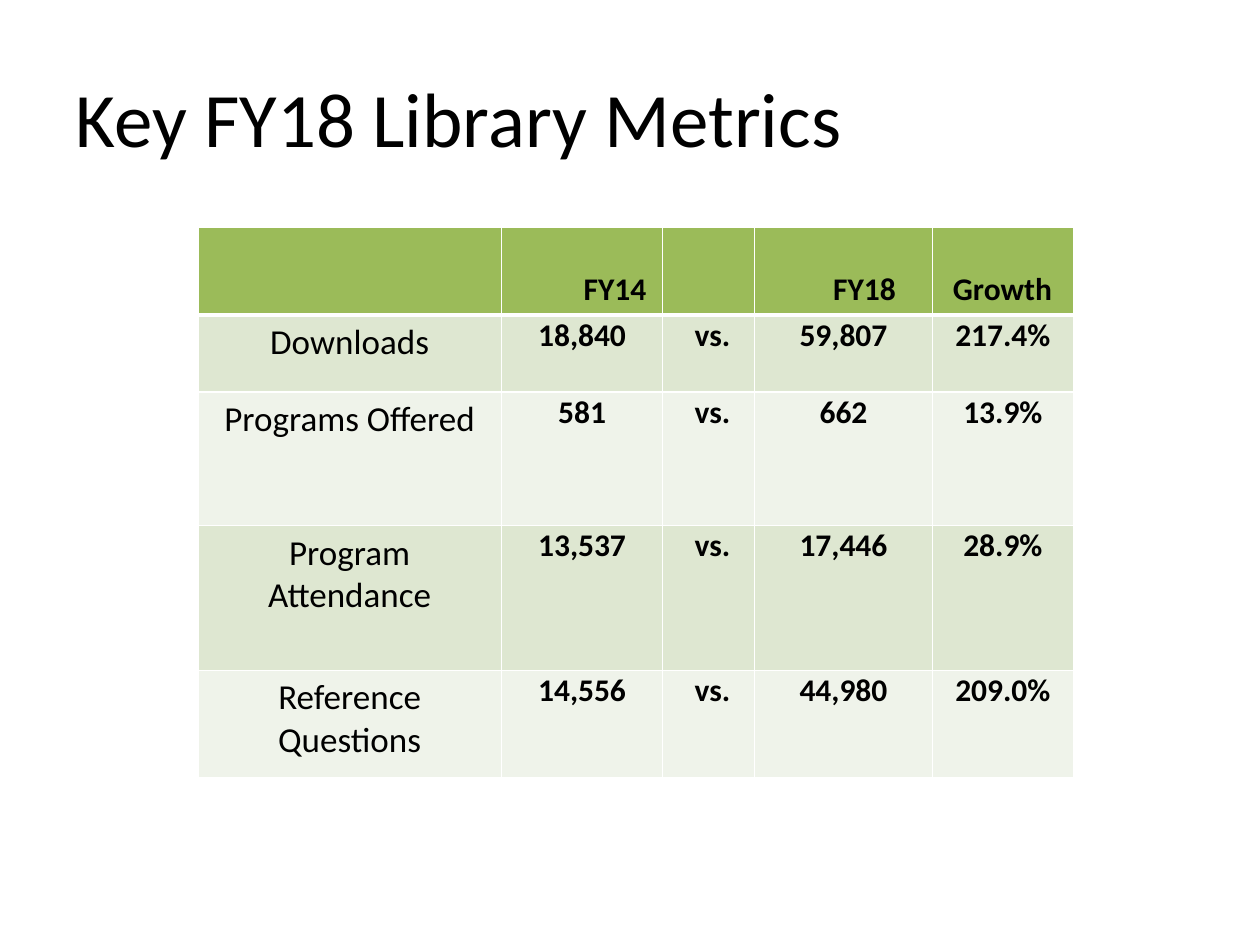
import pptx
import pptx.util
import pptx.dml.color
import pptx.enum.text
import pptx.oxml
import pptx.oxml.ns

Inches = pptx.util.Inches
Pt = pptx.util.Pt
RGBColor = pptx.dml.color.RGBColor
ALIGN = pptx.enum.text.PP_ALIGN
ANCHOR = pptx.enum.text.MSO_ANCHOR

TITLE = "Key FY18 Library Metrics"
HEADS = ["", "FY14", "", "FY18", "Growth"]
METRICS = [
    ("Downloads", "18,840", "59,807", "217.4%"),
    ("Programs Offered", "581", "662", "13.9%"),
    ("Program Attendance", "13,537", "17,446", "28.9%"),
    ("Reference Questions", "14,556", "44,980", "209.0%"),
]
WIDTHS = [2.41, 1.28, 0.73, 1.41, 1.12]
HEIGHTS = [0.7, 0.61, 1.06, 1.15, 0.85]
INDENTS = [0.1, 0.13, 0.1, 0.29, 0.17]

BLACK = RGBColor(0, 0, 0)
WHITE = RGBColor(255, 255, 255)
GREEN = RGBColor(0x9B, 0xBB, 0x59)
BANDS = [RGBColor(0xDE, 0xE7, 0xD1), RGBColor(0xEF, 0xF3, 0xEA)]
VALUE = {"margin_left": Inches(0.01), "margin_right": Inches(0.01),
         "margin_top": Inches(0.01), "margin_bottom": 0}
VERSUS = {**VALUE, "margin_left": Inches(0.07)}


def put(item, values):
    for name, value in values.items():
        setattr(item, name, value)


def style(para, size, bold, align):
    para.alignment = align
    put(para.font, {"name": "Calibri", "size": Pt(size), "bold": bold})
    para.font.color.rgb = BLACK


def edge(cell, sides):
    props = cell._tc.get_or_add_tcPr()
    for side, width in sides.items():
        props.append(pptx.oxml.parse_xml(
            f'<a:ln{side} {pptx.oxml.ns.nsdecls("a")} w="{Pt(width)}">'
            f'<a:solidFill><a:srgbClr val="{WHITE}"/></a:solidFill></a:ln{side}>'))


def main():
    deck = pptx.Presentation()
    put(deck, {"slide_width": Inches(10), "slide_height": Inches(7.5)})
    slide = deck.slides.add_slide(deck.slide_layouts[5])
    title = slide.shapes.title
    put(title, {"left": Inches(0.5), "top": Inches(0.3),
                "width": Inches(9), "height": Inches(1.25)})
    title.text_frame.text = TITLE
    title.text_frame.vertical_anchor = ANCHOR.MIDDLE
    style(title.text_frame.paragraphs[0], 44, False, ALIGN.LEFT)

    rows = [HEADS] + [(name, old, "vs.", new, growth)
                      for name, old, new, growth in METRICS]
    table = slide.shapes.add_table(
        len(rows), len(HEADS), Inches(1.57), Inches(1.8),
        Inches(sum(WIDTHS)), Inches(sum(HEIGHTS))).table
    for col, width in zip(table.columns, WIDTHS):
        col.width = Inches(width)
    for row, height in zip(table.rows, HEIGHTS):
        row.height = Inches(height)

    for r, row in enumerate(rows):
        for c, text in enumerate(row):
            cell = table.cell(r, c)
            edge(cell, {"L": 1, "R": 1, "T": 3 if r == 1 else 1,
                        "B": 3 if r == 0 else 1})
            cell.fill.solid()
            cell.fill.fore_color.rgb = BANDS[(r - 1) % 2] if r else GREEN
            cell.text = text
            label = r > 0 and c == 0
            style(cell.text_frame.paragraphs[0], 20 if label else 18,
                  not label, ALIGN.CENTER if r else ALIGN.RIGHT)
            if r == 0:
                put(cell, {"vertical_anchor": ANCHOR.BOTTOM,
                           "margin_right": Inches(INDENTS[c])})
            elif c:
                put(cell, VERSUS if c == 2 else VALUE)

    deck.save("out.pptx")


if __name__ == "__main__":
    main()
